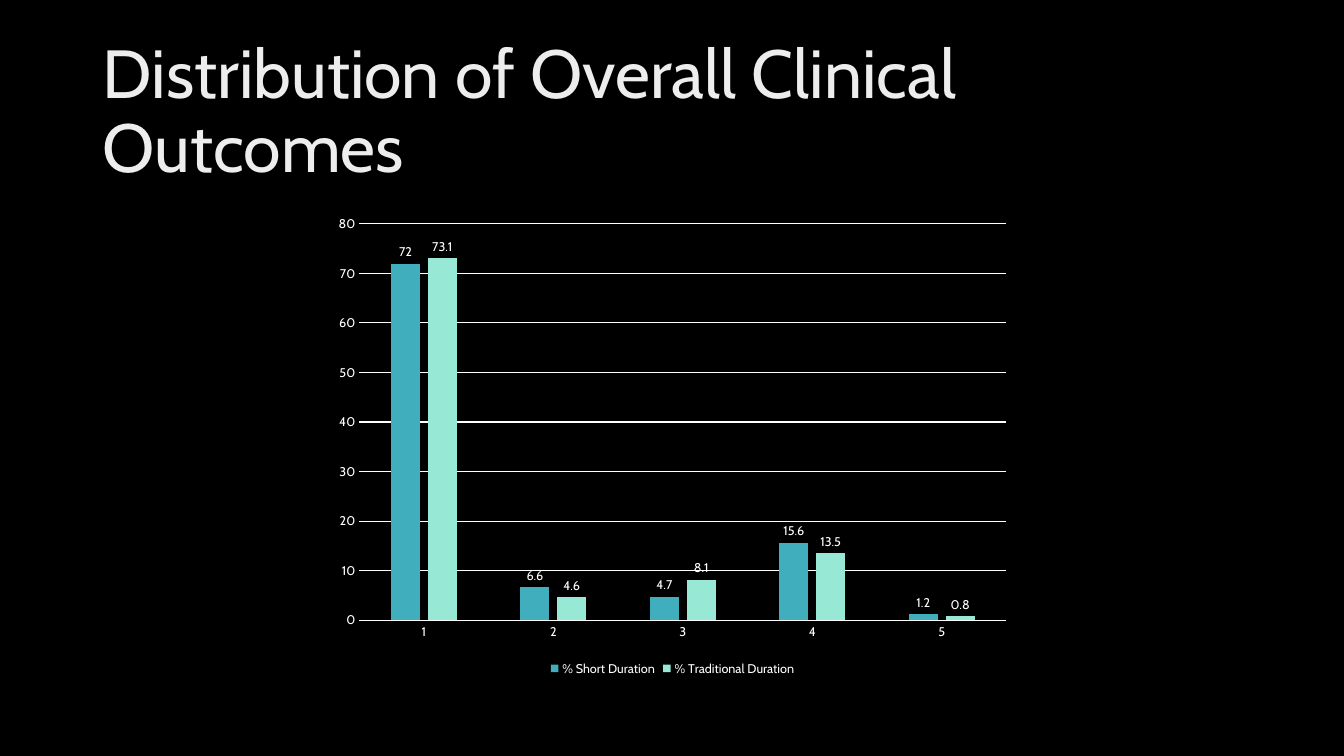
from copy import deepcopy

from pptx import Presentation
from pptx.chart.data import CategoryChartData
from pptx.dml.color import RGBColor
from pptx.enum.chart import XL_CHART_TYPE as ChartType
from pptx.enum.chart import XL_LABEL_POSITION as LabelPosition
from pptx.enum.chart import XL_LEGEND_POSITION as LegendPosition
from pptx.enum.chart import XL_TICK_MARK as TickMark
from pptx.enum.text import MSO_ANCHOR, MSO_AUTO_SIZE, PP_ALIGN
from pptx.util import Inches, Pt

FONT = "Cabin"
COLORS = {
    "background": "000000",
    "text": "FFFFFF",
    "title_dark": "BFBFBF",
    "title_mid": "EDEDED",
    "title_light": "FFFFFF",
    "short": "41AEBD",
    "traditional": "97E9D5",
}
OUTCOMES = ["1", "2", "3", "4", "5"]
DURATIONS = [
    ("% Short Duration", "short", (72, 6.6, 4.7, 15.6, 1.2)),
    ("% Traditional Duration", "traditional", (73.1, 4.6, 8.1, 13.5, 0.8)),
]


def color(name):
    return RGBColor.from_string(COLORS[name])


def style_font(font, size):
    font.name = FONT
    font.size = Pt(size)
    font.color.rgb = color("text")


def style_line(line):
    line.color.rgb = color("text")
    line.width = Pt(0.75)


def fill_title_gradient(fill):
    fill.gradient()
    fill.gradient_angle = 280
    stop_list = fill.gradient_stops[0]._gs.getparent()
    stop_list.append(deepcopy(stop_list[-1]))
    stops = [(0, "title_dark"), (0.28, "title_mid"), (1, "title_light")]
    for stop, (position, name) in zip(fill.gradient_stops, stops):
        stop.position = position
        stop.color.rgb = color(name)


def add_title(slide, box, text):
    title = slide.shapes.title
    title.left, title.top, title.width, title.height = box
    frame = title.text_frame
    frame.word_wrap = True
    frame.auto_size = MSO_AUTO_SIZE.NONE
    frame.vertical_anchor = MSO_ANCHOR.MIDDLE
    paragraph = frame.paragraphs[0]
    paragraph.alignment = PP_ALIGN.LEFT
    paragraph.line_spacing = 0.9
    run = paragraph.add_run()
    run.text = text
    run.font.name = FONT
    run.font.size = Pt(48.6)
    fill_title_gradient(run.font.fill)


def style_axes(chart):
    for axis in (chart.category_axis, chart.value_axis):
        axis.major_tick_mark = TickMark.NONE
        axis.minor_tick_mark = TickMark.NONE
        style_font(axis.tick_labels.font, 9)
    style_line(chart.category_axis.format.line)
    value_axis = chart.value_axis
    value_axis.minimum_scale = 0
    value_axis.maximum_scale = 80
    value_axis.major_unit = 10
    value_axis.format.line.fill.background()
    style_line(value_axis.major_gridlines.format.line)


def add_outcome_chart(slide, box):
    data = CategoryChartData()
    data.categories = OUTCOMES
    for name, _, values in DURATIONS:
        data.add_series(name, values)
    chart = slide.shapes.add_chart(ChartType.COLUMN_CLUSTERED, *box, data).chart
    chart.has_title = False
    style_font(chart.font, 10)
    style_axes(chart)

    chart.has_legend = True
    chart.legend.position = LegendPosition.BOTTOM
    chart.legend.include_in_layout = False
    style_font(chart.legend.font, 9)

    plot = chart.plots[0]
    plot.gap_width = 219
    plot.overlap = -27
    plot.vary_by_categories = False
    for series, (_, color_name, _) in zip(plot.series, DURATIONS):
        series.format.fill.solid()
        series.format.fill.fore_color.rgb = color(color_name)
        series.invert_if_negative = False
        labels = series.data_labels
        labels.show_value = True
        labels.position = LabelPosition.OUTSIDE_END
        style_font(labels.font, 9)


def main():
    presentation = Presentation()
    presentation.slide_width = Inches(13.33)
    presentation.slide_height = Inches(7.5)
    slide = presentation.slides.add_slide(presentation.slide_layouts[5])
    slide.background.fill.solid()
    slide.background.fill.fore_color.rgb = color("background")

    title_box = [Inches(value) for value in (0.92, 0.4, 11.5, 1.45)]
    chart_box = [Inches(value) for value in (3.22, 2.05, 6.9, 4.7)]
    add_title(slide, title_box, "Distribution of Overall Clinical Outcomes")
    add_outcome_chart(slide, chart_box)
    presentation.save("out.pptx")


if __name__ == "__main__":
    main()
